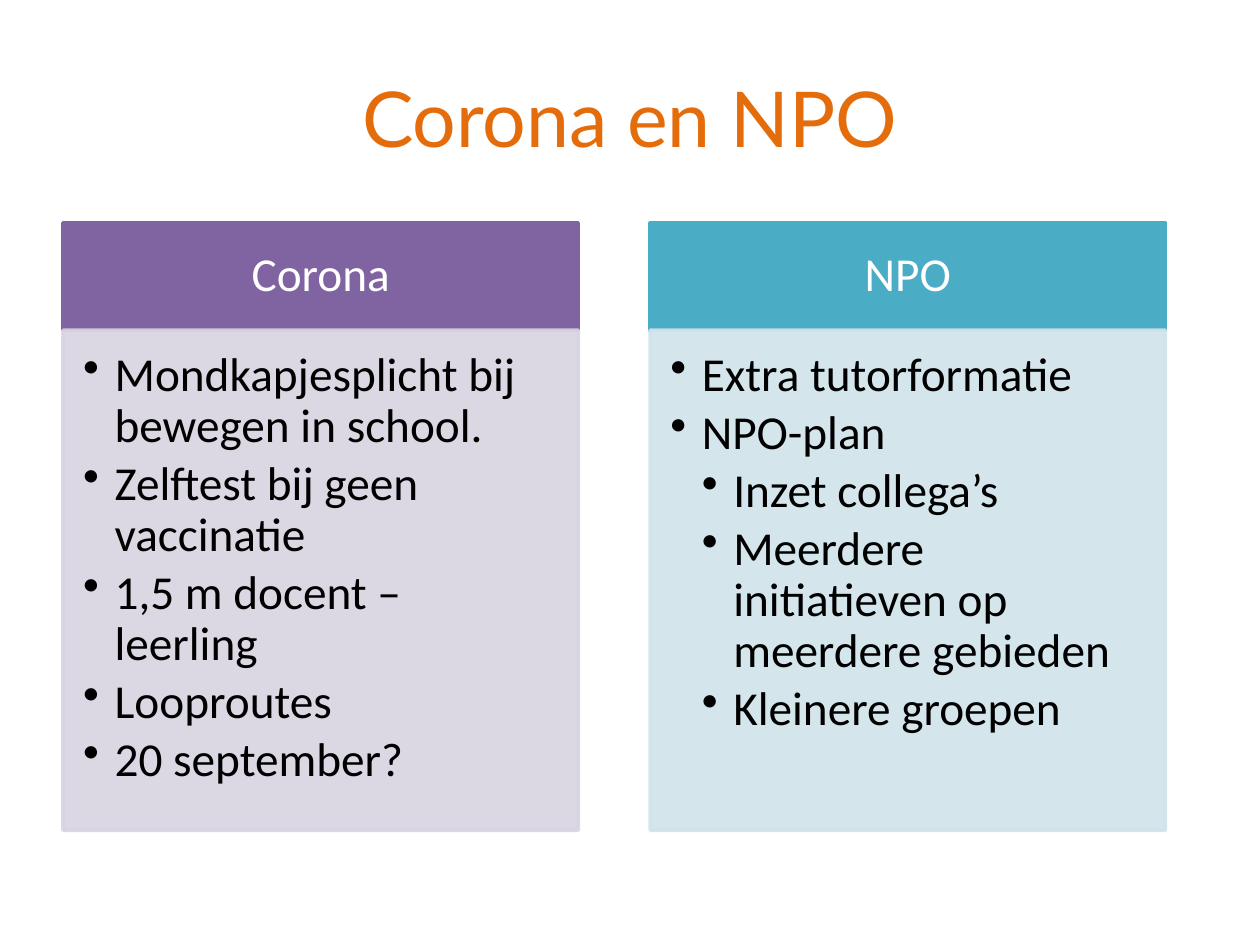
import pptx
import pptx.util
import pptx.dml.color
import pptx.enum.shapes
import pptx.enum.text
import pptx.oxml
import pptx.oxml.ns
from lxml import etree

Inches, Pt = pptx.util.Inches, pptx.util.Pt
ALIGN, ANCHOR = pptx.enum.text.PP_ALIGN, pptx.enum.text.MSO_ANCHOR
qn = pptx.oxml.ns.qn

W, H = 10, 7.5
MARGIN = 0.05 * W
COL_W, COL_PITCH = 0.409 * W, 0.466 * W
HEAD_H, BODY_H = 0.85, 3.97
INDENT = 0.25

COLORS = {
    "title": "E46C0A", "white": "FFFFFF", "black": "000000",
    "purple": "8064A2", "purple_light": "D8D3E0",
    "teal": "4BACC6", "teal_light": "D0E3EA",
}

# heading, colour, (level, text) items
COLUMNS = [
    ("Corona", "purple", [
        (1, "Mondkapjesplicht bij bewegen in school."),
        (1, "Zelftest bij geen vaccinatie"),
        (1, "1,5 m docent – leerling"),
        (1, "Looproutes"),
        (1, "20 september?"),
    ]),
    ("NPO", "teal", [
        (1, "Extra tutorformatie"),
        (1, "NPO-plan"),
        (2, "Inzet collega’s"),
        (2, "Meerdere initiatieven op meerdere gebieden"),
        (2, "Kleinere groepen"),
    ]),
]


def rgb(name):
    return pptx.dml.color.RGBColor.from_string(COLORS[name])


def setup_frame(tf, anchor, insets):
    tf.word_wrap = True
    tf.vertical_anchor = anchor
    tf.margin_left, tf.margin_top, tf.margin_right, tf.margin_bottom = map(Inches, insets)


def add_text(tf, text, size=27, font="Calibri", color="black", align=ALIGN.LEFT,
             spacing=0.9, after=0, level=0):
    """Write one paragraph; a level of 1 or more makes it a bullet."""
    p = tf.paragraphs[0]
    if p.runs:
        p = tf.add_paragraph()
    p.alignment = align
    p.line_spacing = spacing
    p.space_after = Pt(after)
    if level:
        p.level = level
        pPr = p._p.get_or_add_pPr()
        pPr.set("marL", str(Inches(INDENT * level)))
        pPr.set("indent", str(-Inches(INDENT)))
        etree.SubElement(pPr, qn("a:buChar")).set("char", "•")
    r = p.add_run()
    r.text = text
    r.font.size, r.font.name = Pt(size), font
    r.font.color.rgb = rgb(color)


def add_panel(s, box, color, opacity=100):
    sp = s.shapes.add_shape(pptx.enum.shapes.MSO_SHAPE.RECTANGLE, *map(Inches, box))
    sp.shadow.inherit = False
    sp.line.width = Pt(2)
    for fill in (sp.fill, sp.line.fill):
        fill.solid()
        fill.fore_color.rgb = rgb(color)
    if opacity < 100:
        for clr in sp._element.spPr.iter(qn("a:srgbClr")):
            etree.SubElement(clr, qn("a:alpha")).set("val", str(opacity * 1000))
    return sp


def add_title(s, box, text):
    tf = s.shapes.add_textbox(*map(Inches, box)).text_frame
    setup_frame(tf, ANCHOR.MIDDLE, (0.1, 0.05, 0.1, 0.05))
    add_text(tf, text, size=44, font="Lato", color="title", align=ALIGN.CENTER, spacing=1.0)


def add_column(s, box, heading, color, items):
    x, y, w, h = box

    # Heading bar
    tf = add_panel(s, (x, y, w, HEAD_H), color).text_frame
    setup_frame(tf, ANCHOR.MIDDLE, (0.21, 0.12, 0.21, 0.12))
    add_text(tf, heading, color="white", align=ALIGN.CENTER)

    # Bullet list
    body = (x, y + HEAD_H, w, h - HEAD_H)
    tf = add_panel(s, body, color + "_light", opacity=90).text_frame
    setup_frame(tf, ANCHOR.TOP, (0.16, 0.16, 0.21, 0.24))
    for level, text in items:
        add_text(tf, text, after=4, level=level)


def main():
    prs = pptx.Presentation()
    prs.slide_width, prs.slide_height = Inches(W), Inches(H)
    s = prs.slides.add_slide(prs.slide_layouts[6])

    add_title(s, (MARGIN, 0.04 * H, W - 2 * MARGIN, 1.25), "Corona en NPO")
    for i, column in enumerate(COLUMNS):
        add_column(s, (MARGIN + i * COL_PITCH, 1.77, COL_W, HEAD_H + BODY_H), *column)

    prs.save("out.pptx")


if __name__ == "__main__":
    main()
